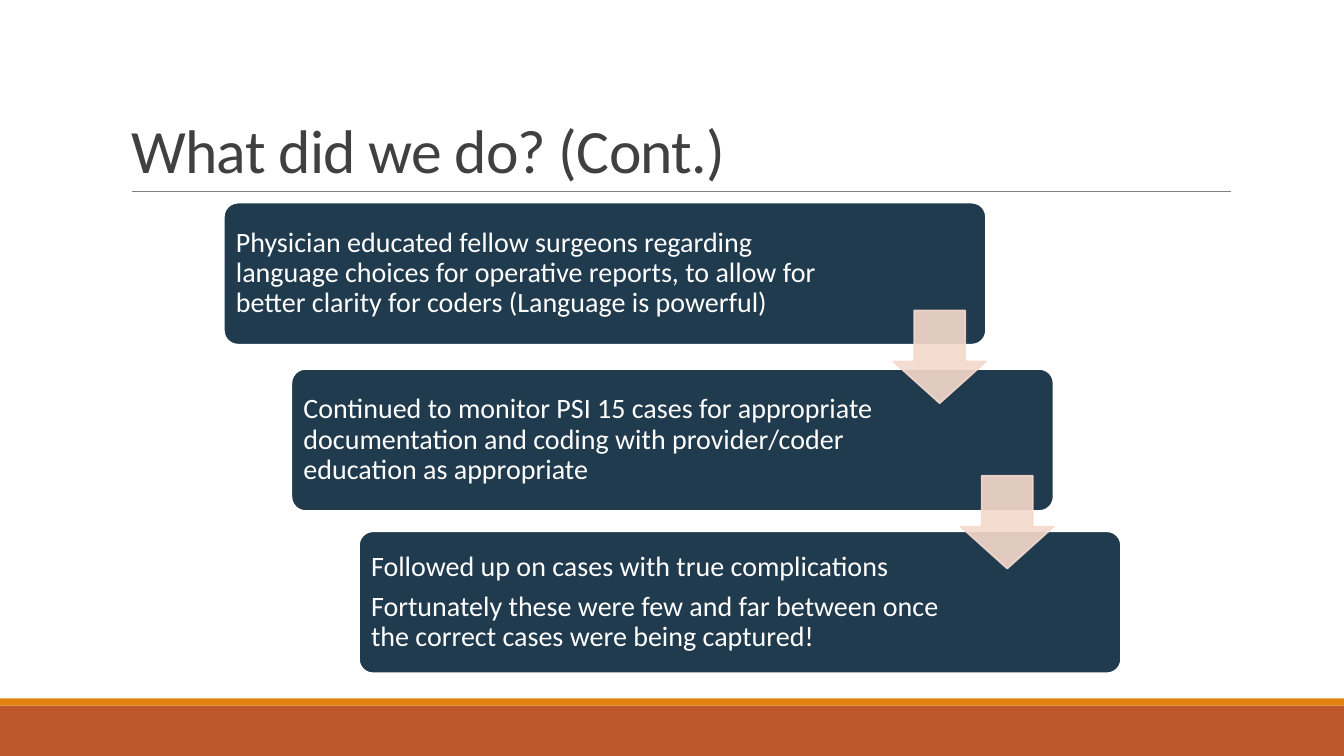
import dataclasses

import lxml.etree
import pptx
import pptx.dml.color
import pptx.enum.shapes
import pptx.enum.text
import pptx.oxml.ns
import pptx.util

Inches = pptx.util.Inches
Pt = pptx.util.Pt
RGBColor = pptx.dml.color.RGBColor
Shape = pptx.enum.shapes.MSO_SHAPE
Anchor = pptx.enum.text.MSO_ANCHOR
qn = pptx.oxml.ns.qn

WHITE = RGBColor(0xFF, 0xFF, 0xFF)
NAVY = RGBColor(0x20, 0x3A, 0x4E)
PINK = RGBColor(0xF5, 0xD9, 0xCC)
RUST = RGBColor(0xBD, 0x58, 0x2C)
ORANGE = RGBColor(0xE4, 0x83, 0x12)
GRAY = RGBColor(0x80, 0x80, 0x80)
DARK = RGBColor(0x40, 0x40, 0x40)

FONT = "Calibri"
WIDTH = 13.33
LEFT = 2.22
SHIFT = 0.67


@dataclasses.dataclass
class Step:
    top: float
    width: float
    lines: list[str]


STEPS = [
    Step(2.01, 6.03, [
        "Physician educated fellow surgeons regarding language choices for "
        "operative reports, to allow for better clarity for coders "
        "(Language is powerful)"]),
    Step(3.66, 5.89, [
        "Continued to monitor PSI 15 cases for appropriate documentation and "
        "coding with provider/coder education as appropriate"]),
    Step(5.27, 5.89, [
        "Followed up on cases with true complications",
        "Fortunately these were few and far between once the correct cases "
        "were being captured!"]),
]


def add_box(slide, kind, left: float, top: float, width: float, height: float,
            fill: RGBColor, edge: RGBColor | None = None):
    box = slide.shapes.add_shape(
        kind, Inches(left), Inches(top), Inches(width), Inches(height))
    box.shadow.inherit = False
    box.fill.solid()
    box.fill.fore_color.rgb = fill
    if edge is None:
        box.line.fill.background()
    else:
        box.line.color.rgb = edge
        box.line.width = Pt(1.25)
    return box


def add_run(para, text: str, size: float, color: RGBColor):
    run = para.add_run()
    run.text = text
    run.font.name = FONT
    run.font.size = Pt(size)
    run.font.color.rgb = color
    return run


def add_title(slide, text: str) -> None:
    title = slide.shapes.title
    title.left, title.top = Inches(1.2), Inches(0.31)
    title.width, title.height = Inches(11), Inches(1.59)
    frame = title.text_frame
    frame.auto_size = pptx.enum.text.MSO_AUTO_SIZE.NONE
    frame.vertical_anchor = Anchor.BOTTOM
    para = frame.paragraphs[0]
    para.alignment = pptx.enum.text.PP_ALIGN.LEFT
    para.line_spacing = 0.85
    run = add_run(para, text, 44, DARK)
    run._r.get_or_add_rPr().set("spc", "-50")


def add_rule(slide) -> None:
    rule = slide.shapes.add_connector(
        pptx.enum.shapes.MSO_CONNECTOR.STRAIGHT,
        Inches(1.31), Inches(1.9), Inches(12.21), Inches(1.9))
    rule.line.color.rgb = GRAY
    rule.line.width = Pt(0.5)
    lxml.etree.SubElement(rule._element.spPr, qn("a:effectLst"))


def add_step(slide, step: Step, left: float) -> None:
    card = add_box(slide, Shape.ROUNDED_RECTANGLE, left, step.top, 7.56, 1.41,
                   NAVY, WHITE)
    card.adjustments[0] = 0.1
    label = slide.shapes.add_textbox(
        Inches(left + 0.04), Inches(step.top + 0.04),
        Inches(step.width), Inches(1.33))
    frame = label.text_frame
    frame.word_wrap = True
    frame.vertical_anchor = Anchor.MIDDLE
    frame.margin_left = frame.margin_right = Inches(0.08)
    frame.margin_top = frame.margin_bottom = Inches(0.08)
    for index, line in enumerate(step.lines):
        para = frame.add_paragraph() if index else frame.paragraphs[0]
        para.line_spacing = 0.9
        para.space_after = Pt(7)
        add_run(para, line, 20, WHITE)


def add_arrow(slide, left: float, top: float) -> None:
    arrow = add_box(slide, Shape.DOWN_ARROW, left, top, 0.92, 0.92, PINK, PINK)
    arrow.adjustments[0] = 0.55
    arrow.adjustments[1] = 0.45
    for color in arrow._element.spPr.iter(qn("a:srgbClr")):
        lxml.etree.SubElement(color, qn("a:alpha")).set("val", "90000")


def main() -> None:
    deck = pptx.Presentation()
    deck.slide_width, deck.slide_height = Inches(WIDTH), Inches(7.5)
    slide = deck.slides.add_slide(deck.slide_layouts[5])
    add_box(slide, Shape.RECTANGLE, 0, 7, WIDTH, 0.5, RUST)
    add_box(slide, Shape.RECTANGLE, 0, 6.93, WIDTH, 0.07, ORANGE)
    add_rule(slide)
    add_title(slide, "What did we do? (Cont.)")
    for index, step in enumerate(STEPS):
        add_step(slide, step, LEFT + SHIFT * index)
    for index in range(len(STEPS) - 1):
        add_arrow(slide, 8.86 + SHIFT * index, 3.08 + 1.64 * index)
    deck.save("out.pptx")


if __name__ == "__main__":
    main()
